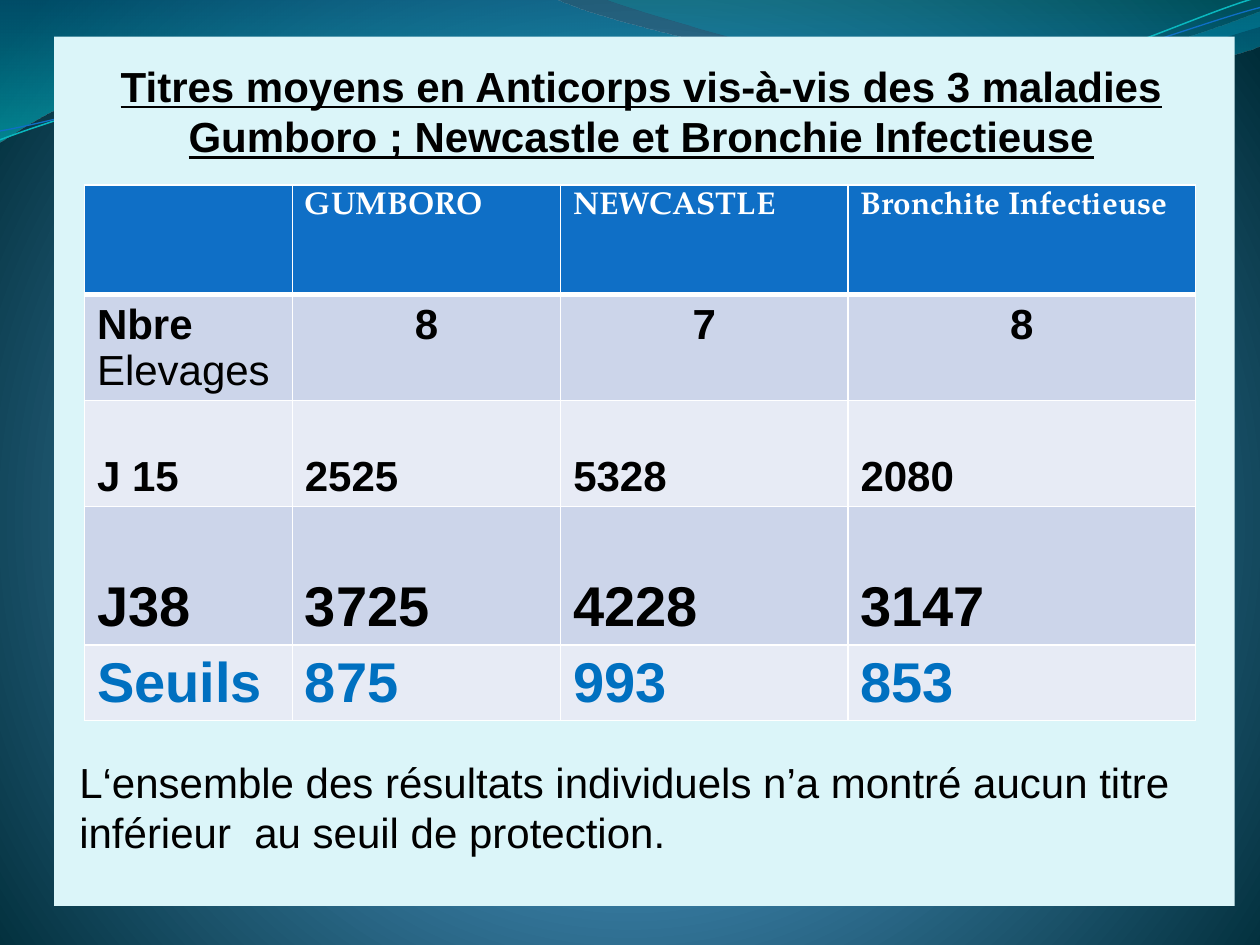
import lxml.etree
import pptx
import pptx.dml.color
import pptx.enum.shapes
import pptx.enum.text
import pptx.oxml
import pptx.oxml.ns
import pptx.util

Inches = pptx.util.Inches
Pt = pptx.util.Pt
qn = pptx.oxml.ns.qn
ALIGN = pptx.enum.text.PP_ALIGN
DRAWING_NS = "http://schemas.openxmlformats.org/drawingml/2006/main"
BLACK, WHITE, BLUE = "000000", "FFFFFF", "0F6FC6"
BANDS = ("CCD5EA", "E7EBF5")

TITLE = ("Titres moyens en Anticorps vis-à-vis des 3 maladies "
         "Gumboro ; Newcastle et Bronchie Infectieuse")
NOTE = ("L‘ensemble des résultats individuels n’a montré aucun titre "
        "inférieur  au seuil de protection.")
DISEASES = ["", "GUMBORO", "NEWCASTLE", "Bronchite Infectieuse"]
TITRES = [
    ([("Nbre ", "Elevages"), "8", "7", "8"], 24, BLACK, 1.0),
    (["J 15", "2525", "5328", "2080"], 24, BLACK, 2.0),
    (["J38", "3725", "4228", "3147"], 32, BLACK, 2.0),
    (["Seuils", "875", "993", "853"], 32, "0070C0", 1.0),
]
COLUMN_WIDTHS = [1.65, 2.13, 2.28, 2.76]
ROW_HEIGHTS = [0.87, 0.84, 0.84, 1.1, 0.6]

LEFT_WAVE = [
    [(-0.01, -0.01)], [(4.4, -0.01)],
    [(4.76, 0.17), (6.64, 0.63), (7.58, 0.63)],
    [(8.53, 0.63), (9.58, 0.26), (10, 0.09)], [(10.01, 0.36)],
    [(9.83, 0.44), (8.7, 0.76), (7.46, 0.75)],
    [(6.22, 0.75), (3.82, 0.28), (2.57, 0.34)],
    [(1.29, 0.36), (0.46, 0.83), (-0.01, 1.13)],
]
RIGHT_WAVE = [
    [(4.79, -0.01)],
    [(5.09, 0.11), (6.82, 0.62), (7.69, 0.65)],
    [(8.56, 0.69), (9.61, 0.32), (10, 0.21)], [(10, 0)],
]
TEAL_STRAND = [
    [(0, 1.11)],
    [(0.48, 0.93), (1.58, 0.57), (2.77, 0.52)],
    [(3.95, 0.47), (5.93, 0.89), (7.13, 0.8)],
    [(8.33, 0.71), (9.38, 0.15), (9.98, -0.02)],
]
BLUE_STRAND = [
    [(0, 1.04)],
    [(0.47, 0.96), (1.64, 0.61), (2.83, 0.56)],
    [(4.03, 0.51), (5.97, 0.84), (7.17, 0.75)],
    [(8.36, 0.67), (9.41, 0.21), (10, 0.06)],
]


def color(value):
    """Turn a hex string into a colour."""
    return pptx.dml.color.RGBColor.from_string(value)


def set_gradient(fill, owner, stops, direction):
    """Give a fill gradient stops of position, colour and opacity."""
    fill.gradient()
    gradient = next(owner.iter(qn("a:gradFill")))
    marks = "".join(
        f'<a:gs pos="{position * 1000}"><a:srgbClr val="{value}">'
        f'<a:alpha val="{opacity * 1000}"/></a:srgbClr></a:gs>'
        for position, value, opacity in stops)
    gradient.getparent().replace(gradient, pptx.oxml.parse_xml(
        f'<a:gradFill xmlns:a="{DRAWING_NS}" rotWithShape="1">'
        f'<a:gsLst>{marks}</a:gsLst>{direction}</a:gradFill>'))


def add_curve(slide, segments, left, top, close):
    """Draw an outline of straight and cubic segments from a corner."""
    placed = [[(Inches(left + x), Inches(top + y)) for x, y in segment]
              for segment in segments]
    start_x, start_y = placed[0][0]
    builder = slide.shapes.build_freeform(start_x, start_y, scale=1.0)
    builder.add_line_segments([segment[-1] for segment in placed[1:]],
                              close=close)
    curve = builder.convert_to_shape()
    curve.shadow.inherit = False
    origin = next(curve._element.iter(qn("a:moveTo")))[0]
    shift_x = int(origin.get("x")) - start_x
    shift_y = int(origin.get("y")) - start_y
    strokes = list(curve._element.iter(qn("a:lnTo")))
    for stroke, segment in zip(strokes, placed[1:]):
        if len(segment) == 3:
            bend = lxml.etree.Element(qn("a:cubicBezTo"))
            for x, y in segment:
                lxml.etree.SubElement(bend, qn("a:pt"), x=str(x + shift_x),
                                      y=str(y + shift_y))
            stroke.getparent().replace(stroke, bend)
    return curve


def add_backdrop(slide, left, top):
    """Fill the background and lay the waves along the top."""
    set_gradient(
        slide.background.fill, slide.background._cSld,
        [(0, "4AA0D6", 100), (25, "4C98C7", 100), (100, "002C38", 100)],
        '<a:path path="circle"><a:fillToRect l="10000" t="110000" '
        'r="10000" b="100000"/></a:path>')
    waves = [
        (LEFT_WAVE, [(0, "0074A1", 45), (100, "00C6CF", 55)]),
        (RIGHT_WAVE, [(0, "00A1A9", 30), (80, "008BBF", 45)]),
    ]
    for segments, stops in waves:
        wave = add_curve(slide, segments, left, top, True)
        set_gradient(wave.fill, wave._element.spPr, stops,
                     '<a:lin ang="5400000" scaled="0"/>')
        wave.line.fill.background()
    for segments, tint, width in ((TEAL_STRAND, "0AB8BF", 0.85),
                                  (BLUE_STRAND, BLUE, 0.75)):
        strand = add_curve(slide, segments, left, top, False)
        strand.fill.background()
        strand.line.color.rgb = color(tint)
        strand.line.width = Pt(width)


def set_font(font, size, tint, bold, name="Arial"):
    """Set the face, size, colour and weight of a font."""
    font.name, font.size, font.bold = name, Pt(size), bold
    font.color.rgb = color(tint)


def add_panel(slide, left, top, width, height):
    """Place the pale panel with its title and closing note."""
    panel = slide.shapes.add_shape(
        pptx.enum.shapes.MSO_SHAPE.RECTANGLE,
        Inches(left), Inches(top), Inches(width), Inches(height))
    panel.shadow.inherit = False
    panel.fill.solid()
    panel.fill.fore_color.rgb = color("DBF5F9")
    panel.line.fill.background()
    frame = panel.text_frame
    frame.word_wrap = True
    frame.vertical_anchor = pptx.enum.text.MSO_ANCHOR.TOP
    frame.margin_left = Inches(0.2)
    frame.margin_right = Inches(0.25)
    frame.margin_top = Inches(0.19)
    title, note = frame.paragraphs[0], frame.add_paragraph()
    for paragraph, wording, align, is_title in (
            (title, TITLE, ALIGN.CENTER, True),
            (note, NOTE, ALIGN.LEFT, False)):
        paragraph.text = wording
        paragraph.alignment = align
        set_font(paragraph.font, 24, BLACK, is_title)
        paragraph.font.underline = is_title
    note.space_before = Pt(340)


def style_cell(cell, tint, bottom):
    """Fill a cell and rule its four sides in white."""
    cell.margin_left = cell.margin_right = Inches(0.1)
    cell.margin_top, cell.margin_bottom = Inches(0.05), 0
    properties = cell._tc.get_or_add_tcPr()
    for side, width in (("L", 1), ("R", 1), ("T", 1), ("B", bottom)):
        border = lxml.etree.SubElement(
            properties, qn(f"a:ln{side}"), w=str(Pt(width)))
        solid = lxml.etree.SubElement(border, qn("a:solidFill"))
        lxml.etree.SubElement(solid, qn("a:srgbClr"), val=WHITE)
    cell.fill.solid()
    cell.fill.fore_color.rgb = color(tint)


def add_titre_table(slide, left, top):
    """Place the table of mean titres by disease."""
    table = slide.shapes.add_table(
        len(ROW_HEIGHTS), len(COLUMN_WIDTHS), Inches(left), Inches(top),
        Inches(sum(COLUMN_WIDTHS)), Inches(sum(ROW_HEIGHTS))).table
    for column, width in zip(table.columns, COLUMN_WIDTHS):
        column.width = Inches(width)
    for row, height in zip(table.rows, ROW_HEIGHTS):
        row.height = Inches(height)
    for cell, disease in zip(table.rows[0].cells, DISEASES):
        style_cell(cell, BLUE, 3)
        heading = cell.text_frame.paragraphs[0]
        heading.text = disease
        set_font(heading.font, 18, WHITE, True, "TeX Gyre Pagella")
    for index, (values, size, tint, spacing) in enumerate(TITRES):
        for column, value in enumerate(values):
            cell = table.cell(index + 1, column)
            style_cell(cell, BANDS[index % 2], 1)
            entry = cell.text_frame.paragraphs[0]
            entry.line_spacing = spacing
            if index == 0 and column > 0:
                entry.alignment = ALIGN.CENTER
            parts = value if isinstance(value, tuple) else (value,)
            for position, part in enumerate(parts):
                run = entry.add_run()
                run.text = part
                set_font(run.font, size, tint, position == 0)


def main():
    """Build the slide and save it."""
    deck = pptx.Presentation()
    deck.slide_width, deck.slide_height = Inches(10), Inches(7.5)
    slide = deck.slides.add_slide(deck.slide_layouts[6])
    add_backdrop(slide, 0, 0)
    add_panel(slide, 0.43, 0.29, 9.37, 6.9)
    add_titre_table(slide, 0.67, 1.47)
    deck.save("out.pptx")


if __name__ == "__main__":
    main()
